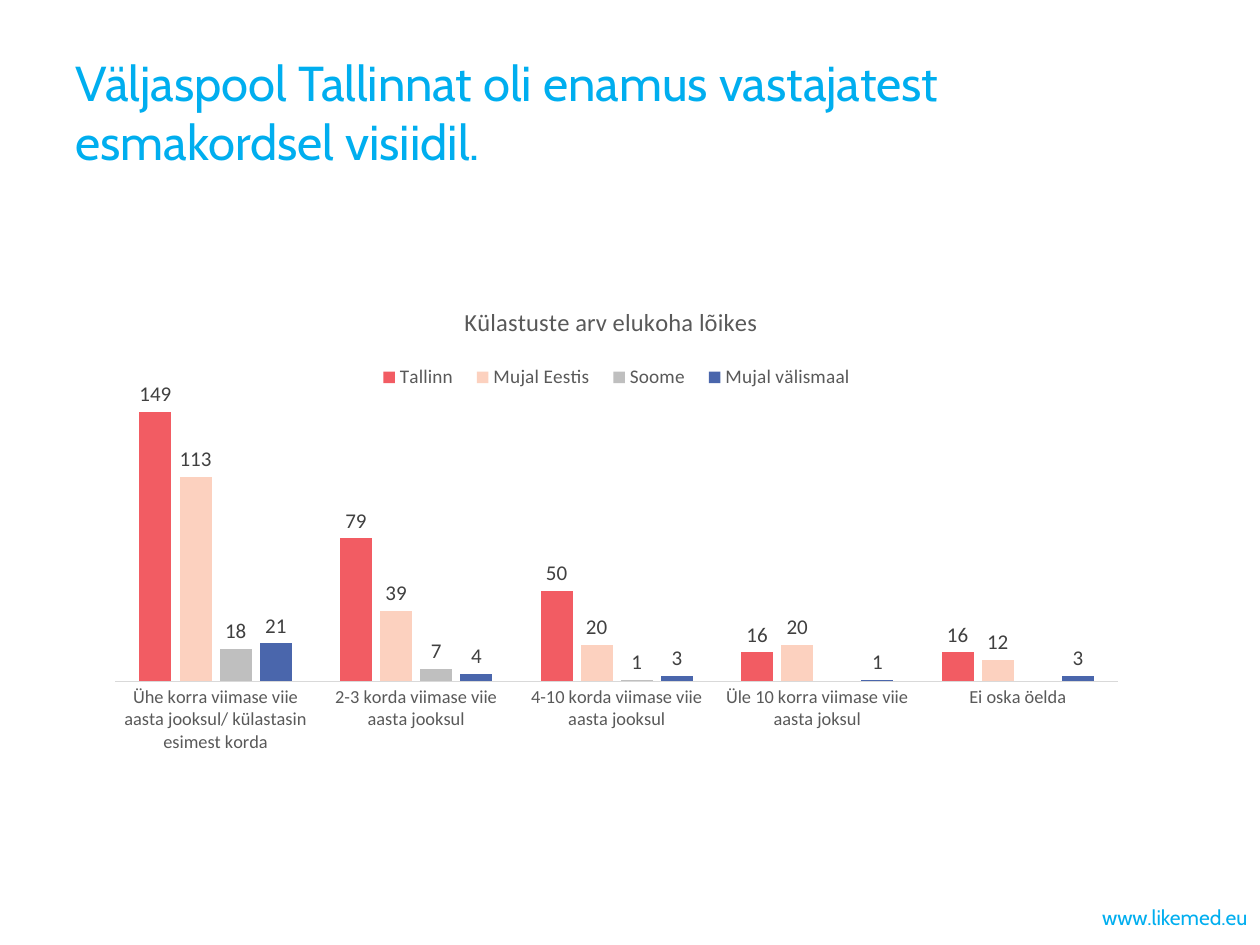
from pptx import Presentation
from pptx.chart.data import CategoryChartData
from pptx.dml.color import RGBColor
from pptx.enum.chart import XL_CHART_TYPE, XL_LABEL_POSITION, XL_LEGEND_POSITION, XL_TICK_MARK
from pptx.enum.text import MSO_ANCHOR, PP_ALIGN
from pptx.oxml import parse_xml
from pptx.oxml.ns import nsdecls
from pptx.util import Inches, Pt

CYAN = RGBColor(0x00, 0xAE, 0xEF)
BLACK = RGBColor(0x00, 0x00, 0x00)
GREY = RGBColor(0x59, 0x59, 0x59)
DARK_GREY = RGBColor(0x40, 0x40, 0x40)
AXIS_GREY = RGBColor(0xD9, 0xD9, 0xD9)

CATEGORIES = [
    "Ühe korra viimase viie aasta jooksul/ külastasin esimest korda",
    "2-3 korda viimase viie aasta jooksul",
    "4-10 korda viimase viie aasta jooksul",
    "Üle 10 korra viimase viie aasta joksul",
    "Ei oska öelda",
]
# Home region: visits per category, bar colour
REGIONS = {
    "Tallinn": ([149, 79, 50, 16, 16], RGBColor(0xF2, 0x5C, 0x63)),
    "Mujal Eestis": ([113, 39, 20, 20, 12], RGBColor(0xFC, 0xD1, 0xBF)),
    "Soome": ([18, 7, 1, None, None], RGBColor(0xBF, 0xBF, 0xBF)),
    "Mujal välismaal": ([21, 4, 3, 1, 3], RGBColor(0x4A, 0x66, 0xAC)),
}


def set_font(font, size, color, name="Calibri"):
    font.name = name
    font.size = Pt(size)
    font.bold = False
    font.color.rgb = color


def place(shape, left, top, width, height):
    shape.left, shape.top = Inches(left), Inches(top)
    shape.width, shape.height = Inches(width), Inches(height)


def write_text(box, text, size, color=CYAN, font="Cabin", align=PP_ALIGN.LEFT):
    frame = box.text_frame
    frame.word_wrap = True
    frame.vertical_anchor = MSO_ANCHOR.MIDDLE
    para = frame.paragraphs[0]
    para.alignment = align
    span = para.add_run()
    span.text = text
    set_font(span.font, size, color, font)


def layout_xml(x, y, width=None, height=None, inner=False):
    """Manual chart layout, in fractions of the chart area."""
    target = '<c:layoutTarget val="inner"/>' if inner else ""
    sizes = "" if width is None else f'<c:w val="{width}"/><c:h val="{height}"/>'
    return parse_xml(
        f'<c:layout {nsdecls("c")}><c:manualLayout>{target}'
        f'<c:xMode val="edge"/><c:yMode val="edge"/>'
        f'<c:x val="{x}"/><c:y val="{y}"/>{sizes}</c:manualLayout></c:layout>'
    )


def set_layout(element, layout, after=None):
    for old in element.findall(layout.tag):
        element.remove(old)
    if after is None:
        element.insert(0, layout)
    else:
        after.addnext(layout)


def format_axes(chart):
    axis = chart.category_axis
    axis.major_tick_mark = axis.minor_tick_mark = XL_TICK_MARK.NONE
    axis.format.line.color.rgb = AXIS_GREY
    axis.format.line.width = Pt(0.75)
    set_font(axis.tick_labels.font, 10.5, GREY)
    values = chart.value_axis
    values.minimum_scale, values.maximum_scale = 0, 160
    values.has_major_gridlines = False
    values.visible = False


def format_series(plot):
    plot.gap_width, plot.overlap = 150, -25
    plot.vary_by_categories = False
    for series, (_, color) in zip(plot.series, REGIONS.values()):
        series.format.fill.solid()
        series.format.fill.fore_color.rgb = color
        series.invert_if_negative = False
        labels = series.data_labels
        labels.show_value = True
        labels.position = XL_LABEL_POSITION.OUTSIDE_END
        set_font(labels.font, 12, DARK_GREY)


def format_title(chart, text):
    chart.has_title = True
    title = chart.chart_title
    para = title.text_frame.paragraphs[0]
    span = para.add_run()
    span.text = text
    set_font(span.font, 14, GREY)
    title.include_in_layout = False
    rich_text = title.text_frame._txBody.getparent()
    set_layout(rich_text.getparent(), layout_xml(0.35, 0.04), rich_text)


def format_legend(chart):
    chart.has_legend = True
    legend = chart.legend
    legend.position = XL_LEGEND_POSITION.TOP
    legend.include_in_layout = False
    set_font(legend.font, 11, GREY)
    element = legend._element
    set_layout(element, layout_xml(0.26, 0.17, 0.48, 0.06), element[0])


def add_visit_chart(page):
    data = CategoryChartData()
    data.categories = CATEGORIES
    for name, (visits, _) in REGIONS.items():
        data.add_series(name, visits)
    chart = page.shapes.add_chart(
        XL_CHART_TYPE.COLUMN_CLUSTERED,
        Inches(0.75), Inches(2.23), Inches(8.29), Inches(3.83), data,
    ).chart
    set_font(chart.font, 10, BLACK, "Cabin")
    format_title(chart, "Külastuste arv elukoha lõikes")
    format_legend(chart)
    format_axes(chart)
    format_series(chart.plots[0])
    plot_area = chart.plots[0]._element.getparent()
    set_layout(plot_area, layout_xml(0.02, 0.23, 0.96, 0.6, inner=True))


def main():
    deck = Presentation()
    deck.slide_width, deck.slide_height = Inches(10), Inches(7.5)
    page = deck.slides.add_slide(deck.slide_layouts[5])

    # Heading
    place(page.shapes.title, 0.5, 0.08, 9, 1.61)
    write_text(page.shapes.title, "Väljaspool Tallinnat oli enamus vastajatest esmakordsel visiidil.", 28)

    # Web address in the corner
    address = page.shapes.add_textbox(Inches(6.83), Inches(7.08), Inches(3.17), Inches(0.4))
    write_text(address, "www.likemed.eu", 12, align=PP_ALIGN.RIGHT)
    address.text_frame.margin_right = Inches(0.1)

    # Visits by home region
    add_visit_chart(page)

    deck.save("out.pptx")


if __name__ == "__main__":
    main()
